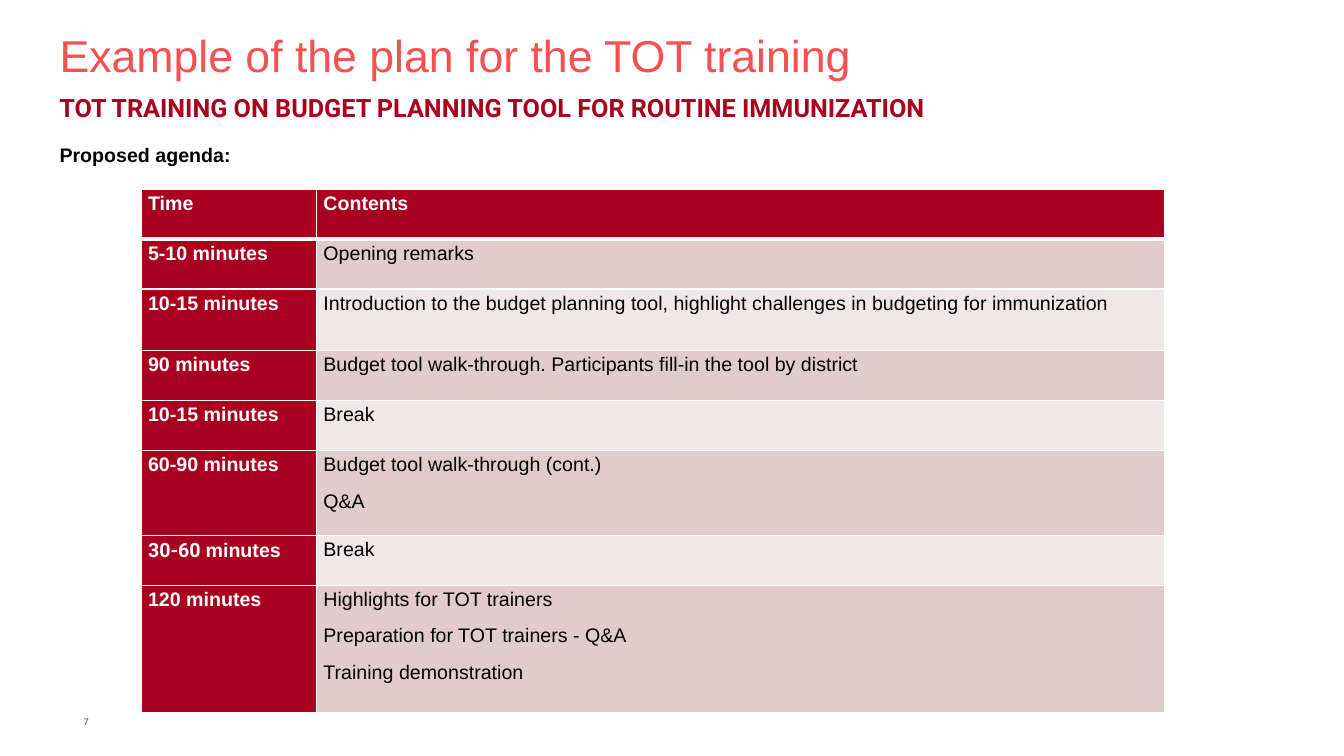
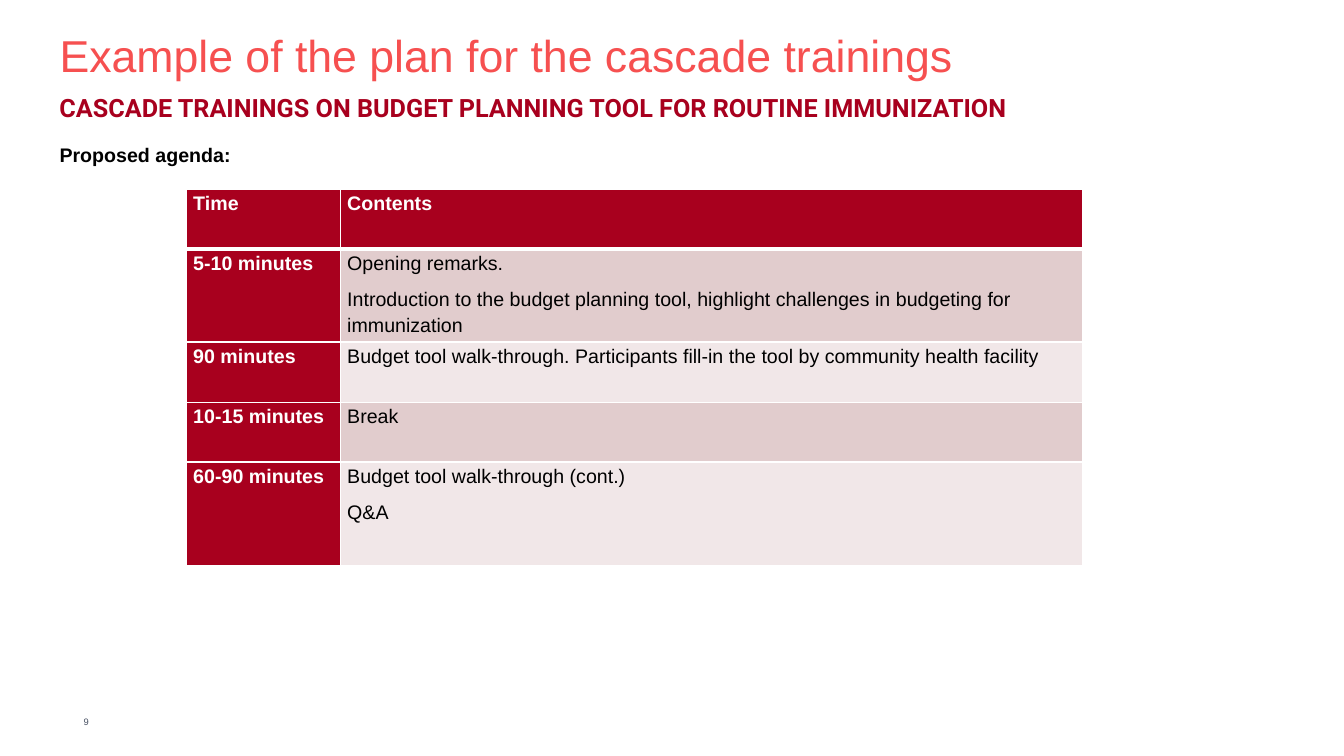
from dataclasses import dataclass

from lxml import etree
from pptx import Presentation
from pptx import util as u
from pptx.dml.color import RGBColor
from pptx.enum import text
from pptx.oxml import ns

CORAL = RGBColor(0xF6, 0x50, 0x50)
CRIMSON = RGBColor(0xA8, 0x00, 0x1E)
ROSE = RGBColor(0xE1, 0xCC, 0xCD)
BLUSH = RGBColor(0xF1, 0xE7, 0xE8)
SLATE = RGBColor(0x46, 0x4F, 0x61)
BLACK = RGBColor(0, 0, 0)
WHITE = RGBColor(255, 255, 255)

ARIAL = "Arial"
ROBOTO = "Roboto"

MARGIN = u.Cm(1.5)
AGENDA_TOP = u.Cm(4.78)
CELL_INSET = u.Cm(0.17)


@dataclass(frozen=True)
class Session:
    time: str
    contents: tuple[str, ...]
    height: float
    figure_font: str = ARIAL


@dataclass(frozen=True)
class Plan:
    """One agenda slide; lengths are in centimetres."""
    number: int
    title: str
    subtitle: str
    table_left: float
    column_widths: tuple[float, float]
    header_height: float
    sessions: tuple[Session, ...]


INTRODUCTION = ("Introduction to the budget planning tool, "
                "highlight challenges in budgeting for immunization")
CONTINUED = ("Budget tool walk-through (cont.)", "Q&A")
BREAK = ("Break",)

PLANS = (
    Plan(
        7, "Example of the plan for the TOT training",
        "TOT TRAINING ON BUDGET PLANNING TOOL FOR ROUTINE IMMUNIZATION",
        3.56, (4.42, 21.37), 1.25,
        (
            Session("5-10 minutes", ("Opening remarks",), 1.25),
            Session("10-15 minutes", (INTRODUCTION,), 1.56),
            Session("90 minutes", (
                "Budget tool walk-through. Participants fill-in the tool by district",), 1.26),
            Session("10-15 minutes", BREAK, 1.25),
            Session("60-90 minutes", CONTINUED, 2.14),
            Session("30-60 minutes", BREAK, 1.26, figure_font=ROBOTO),
            Session("120 minutes", (
                "Highlights for TOT trainers",
                "Preparation for TOT trainers - Q&A",
                "Training demonstration"), 3.2),
        ),
    ),
    Plan(
        9, "Example of the plan for the cascade trainings",
        "CASCADE TRAININGS ON BUDGET PLANNING TOOL FOR ROUTINE IMMUNIZATION",
        4.7, (3.88, 18.71), 1.5,
        (
            Session("5-10 minutes", ("Opening remarks.", INTRODUCTION), 2.34),
            Session("90 minutes", (
                "Budget tool walk-through. Participants fill-in the tool "
                "by community health facility",), 1.52),
            Session("10-15 minutes", BREAK, 1.5),
            Session("60-90 minutes", CONTINUED, 2.6),
        ),
    ),
)


def set_font(font, size: float, color: RGBColor, name: str = ARIAL, bold: bool = False) -> None:
    font.size, font.name, font.bold = u.Pt(size), name, bold
    font.color.rgb = color


def place(shape, left: int, top: int, width: int, height: int) -> None:
    shape.left, shape.top, shape.width, shape.height = left, top, width, height


def write_line(shape, wording: str, inset: int = 0, anchor=text.MSO_ANCHOR.TOP):
    """Fill the shape with one left-aligned paragraph and return it."""
    frame = shape.text_frame
    frame.text = wording
    frame.word_wrap = True
    frame.auto_size = text.MSO_AUTO_SIZE.NONE
    frame.vertical_anchor = anchor
    frame.margin_left = frame.margin_right = inset
    frame.margin_top = frame.margin_bottom = inset // 2
    line = frame.paragraphs[0]
    line.alignment = text.PP_ALIGN.LEFT
    return line


def remove_bullet(paragraph) -> None:
    properties = paragraph._p.get_or_add_pPr()
    properties.set("marL", "0")
    properties.set("indent", "0")
    etree.SubElement(properties, ns.qn("a:buNone"))


def add_headings(slide, plan: Plan) -> None:
    title = slide.shapes.title
    place(title, MARGIN, u.Cm(0.64), u.Cm(29.77), u.Cm(2.9))
    line = write_line(title, plan.title)
    line.line_spacing = u.Pt(39.8)
    set_font(line.font, 31.9, CORAL)

    agenda_label = slide.placeholders[1]
    place(agenda_label, MARGIN, u.Cm(3.56), u.Cm(29.74), u.Cm(1.55))
    line = write_line(agenda_label, "Proposed agenda:")
    remove_bullet(line)
    line.line_spacing = u.Pt(17.9)
    line.space_before = u.Pt(0)
    set_font(line.font, 14, BLACK, bold=True)

    subtitle = slide.shapes.add_textbox(u.Cm(1.25), u.Cm(2.21), u.Cm(29.52), u.Cm(1.02))
    line = write_line(subtitle, plan.subtitle, inset=u.Cm(0.25))
    set_font(line.font, 18, CRIMSON, ROBOTO, bold=True)


def add_page_number(slide, number: int) -> None:
    page_number = slide.shapes.add_textbox(u.Cm(2.11), u.Cm(17.96), u.Cm(0.5), u.Cm(0.46))
    line = write_line(page_number, str(number), anchor=text.MSO_ANCHOR.MIDDLE)
    set_font(line.font, 6.7, SLATE)


def set_borders(cell, top: float, bottom: float) -> None:
    """Draw white cell edges; top and bottom widths are in points."""
    properties = cell._tc.get_or_add_tcPr()
    widths = {"a:lnL": 1, "a:lnR": 1, "a:lnT": top, "a:lnB": bottom}
    for position, (edge, width) in enumerate(widths.items()):
        border = etree.Element(ns.qn(edge), w=str(u.Pt(width)))
        fill = etree.SubElement(border, ns.qn("a:solidFill"))
        etree.SubElement(fill, ns.qn("a:srgbClr"), val=str(WHITE))
        properties.insert(position, border)


def fill_cell(cell, lines: tuple[str, ...], fill: RGBColor, heading: bool) -> None:
    cell.fill.solid()
    cell.fill.fore_color.rgb = fill
    cell.margin_left = cell.margin_right = CELL_INSET
    cell.margin_top = cell.margin_bottom = 0
    cell.text_frame.text = "\n".join(lines)
    for paragraph in cell.text_frame.paragraphs:
        paragraph.line_spacing = 1.15
        paragraph.space_after = u.Pt(8)
        set_font(paragraph.font, 14, WHITE if heading else BLACK, bold=heading)


def set_figure_font(cell, session: Session) -> None:
    """Give the figure before the unit its own font."""
    figure, space, unit = session.time.partition(" ")
    paragraph = cell.text_frame.paragraphs[0]
    paragraph.runs[0].text = figure + space
    paragraph.runs[0].font.name = session.figure_font
    paragraph.add_run().text = unit


def add_agenda(slide, plan: Plan) -> None:
    heights = [plan.header_height, *(session.height for session in plan.sessions)]
    agenda = slide.shapes.add_table(
        len(heights), 2, u.Cm(plan.table_left), AGENDA_TOP,
        u.Cm(sum(plan.column_widths)), u.Cm(sum(heights))).table
    agenda.first_col = True
    for column, width in zip(agenda.columns, plan.column_widths):
        column.width = u.Cm(width)
    for row, height in zip(agenda.rows, heights):
        row.height = u.Cm(height)

    for column, label in enumerate(("Time", "Contents")):
        fill_cell(agenda.cell(0, column), (label,), CRIMSON, heading=True)
        set_borders(agenda.cell(0, column), top=1, bottom=3)

    for row, session in enumerate(plan.sessions, start=1):
        time, contents = agenda.cell(row, 0), agenda.cell(row, 1)
        fill_cell(time, (session.time,), CRIMSON, heading=True)
        fill_cell(contents, session.contents, ROSE if row % 2 else BLUSH, heading=False)
        if session.figure_font != ARIAL:
            set_figure_font(time, session)
        for cell in (time, contents):
            set_borders(cell, top=3 if row == 1 else 1, bottom=1)


def main() -> None:
    deck = Presentation()
    deck.slide_width, deck.slide_height = u.Cm(33.87), u.Cm(19.05)
    for plan in PLANS:
        slide = deck.slides.add_slide(deck.slide_layouts[1])
        add_headings(slide, plan)
        add_page_number(slide, plan.number)
        add_agenda(slide, plan)
    deck.save("out.pptx")


if __name__ == "__main__":
    main()
